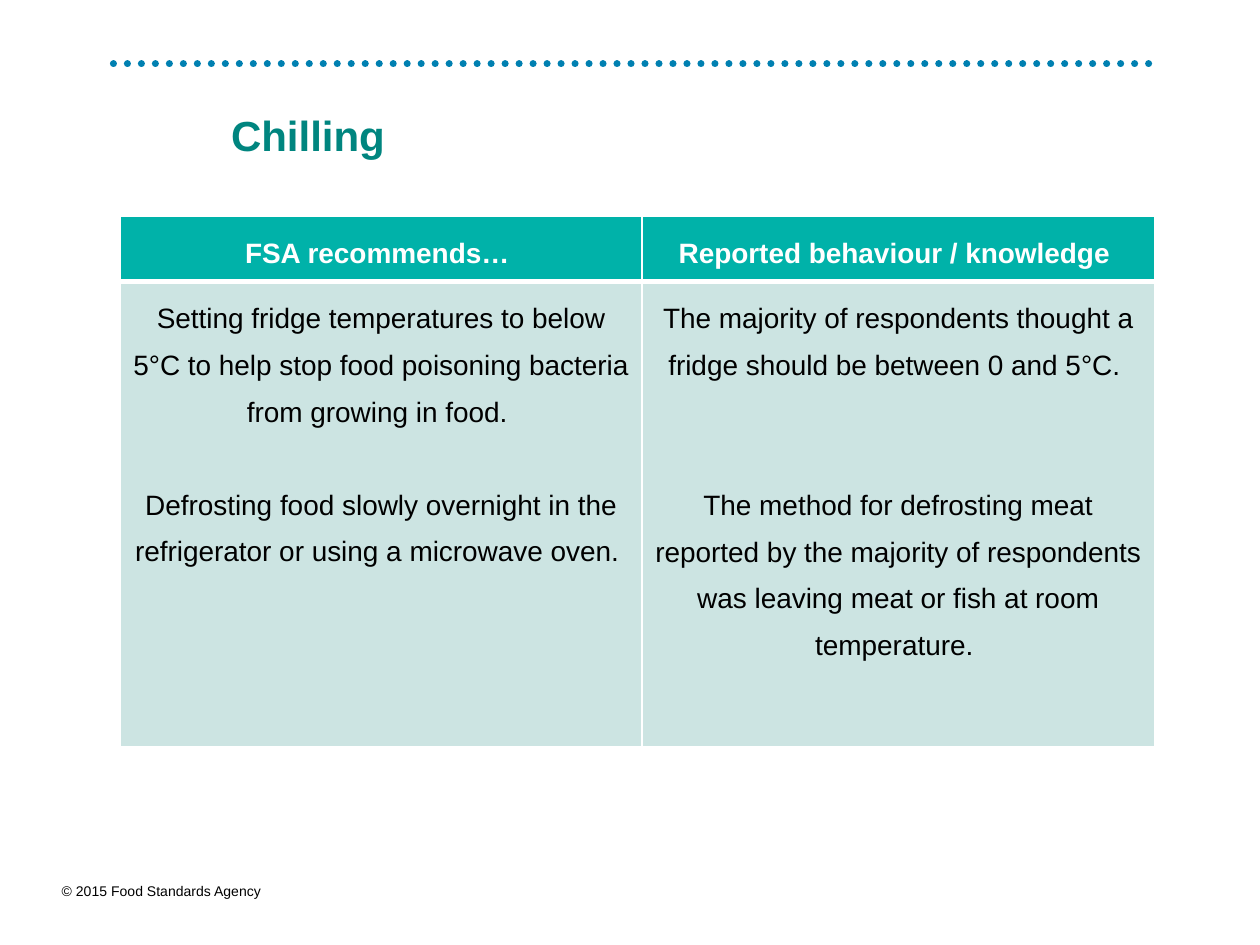
import pptx
import pptx.util
import pptx.dml.color
import pptx.enum.dml
import pptx.enum.shapes
import pptx.enum.text
import pptx.oxml.ns
import pptx.oxml.xmlchemy

Pt = pptx.util.Pt
RGBColor = pptx.dml.color.RGBColor
qn = pptx.oxml.ns.qn
OxmlElement = pptx.oxml.xmlchemy.OxmlElement

BLUE = RGBColor(0x00, 0x80, 0xB1)
DARK_TEAL = RGBColor(0x00, 0x85, 0x7F)
TEAL = RGBColor(0x00, 0xB2, 0xA9)
PALE_TEAL = RGBColor(0xCC, 0xE4, 0xE2)
WHITE = RGBColor(0xFF, 0xFF, 0xFF)
BLACK = RGBColor(0x00, 0x00, 0x00)

LINE_HEIGHT = 26.7
HEADINGS = ["FSA recommends… ", "Reported behaviour / knowledge "]
# Each column: paragraphs with the number of lines left free above them
COLUMNS = [
    [("Setting fridge temperatures to below 5°C to help stop food poisoning "
      "bacteria from growing in food. ", 0),
     ("Defrosting food slowly overnight in the refrigerator or using a "
      "microwave oven. ", 1)],
    [("The majority of respondents thought a fridge should be between "
      "0 and 5°C. ", 0),
     ("The method for defrosting meat reported by the majority of respondents "
      "was leaving meat or fish at room temperature. ", 2)],
]


def format_runs(paragraph, size, color, bold=False):
    for run in paragraph.runs:
        run.font.name = "Arial"
        run.font.size = Pt(size)
        run.font.bold = bold
        run.font.color.rgb = color


def add_dotted_rule(slide, left, top, width):
    rule = slide.shapes.add_connector(
        pptx.enum.shapes.MSO_CONNECTOR.STRAIGHT,
        Pt(left), Pt(top), Pt(left + width), Pt(top))
    rule.line.color.rgb = BLUE
    rule.line.width = Pt(4)
    rule.line.dash_style = pptx.enum.dml.MSO_LINE.ROUND_DOT
    properties = rule._element.spPr
    properties.find(qn("a:ln")).set("cap", "rnd")
    properties.append(OxmlElement("a:effectLst"))


def add_title(slide, left, top, width, height):
    title = slide.shapes.add_textbox(Pt(left), Pt(top), Pt(width), Pt(height))
    frame = title.text_frame
    frame.word_wrap = True
    frame.vertical_anchor = pptx.enum.text.MSO_ANCHOR.MIDDLE
    frame.margin_left = Pt(66.5)
    frame.margin_right = frame.margin_top = frame.margin_bottom = 0
    frame.text = "Chilling"
    frame.paragraphs[0].line_spacing = 0.9
    format_runs(frame.paragraphs[0], 24, DARK_TEAL, bold=True)


def set_borders(cell, bottom_width):
    """Give the cell white borders, 1 pt wide except at the bottom."""
    properties = cell._tc.get_or_add_tcPr()
    widths = {"a:lnL": 1, "a:lnR": 1, "a:lnT": 1, "a:lnB": bottom_width}
    for position, (tag, width) in enumerate(widths.items()):
        border = OxmlElement(tag)
        border.set("w", str(int(Pt(width))))
        fill = OxmlElement("a:solidFill")
        color = OxmlElement("a:srgbClr")
        color.set("val", str(WHITE))
        fill.append(color)
        border.append(fill)
        properties.insert(position, border)


def fill_cell(cell, paragraphs, background, color, bold, bottom_width):
    cell.fill.solid()
    cell.fill.fore_color.rgb = background
    set_borders(cell, bottom_width)
    frame = cell.text_frame
    frame.text = "\n".join(text for text, _ in paragraphs)
    for paragraph, (_, free_lines) in zip(frame.paragraphs, paragraphs):
        paragraph.alignment = pptx.enum.text.PP_ALIGN.CENTER
        paragraph.line_spacing = 1.5
        if free_lines:
            paragraph.space_before = Pt(free_lines * LINE_HEIGHT)
        format_runs(paragraph, 16, color, bold)


def add_comparison(slide, left, top, width, height):
    table = slide.shapes.add_table(
        2, 2, Pt(left), Pt(top), Pt(width), Pt(height)).table
    header_height, first_width = 37.5, 298
    table.rows[0].height = Pt(header_height)
    table.rows[1].height = Pt(height - header_height)
    table.columns[0].width = Pt(first_width)
    table.columns[1].width = Pt(width - first_width)
    for column, (heading, paragraphs) in enumerate(zip(HEADINGS, COLUMNS)):
        fill_cell(table.cell(0, column), [(heading, 0)], TEAL, WHITE, True, 3)
        fill_cell(table.cell(1, column), paragraphs, PALE_TEAL, BLACK, False, 1)
        # The edge shared by both rows is drawn at one width
        shared_edge = table.cell(1, column)._tc.tcPr.find(qn("a:lnT"))
        shared_edge.set("w", str(int(Pt(3))))


def add_copyright(slide, left, top, width, height):
    box = slide.shapes.add_textbox(Pt(left), Pt(top), Pt(width), Pt(height))
    frame = box.text_frame
    frame.word_wrap = False
    frame.text = "© 2015 Food Standards Agency"
    format_runs(frame.paragraphs[0], 8, BLACK)


def main():
    presentation = pptx.Presentation()
    presentation.slide_width = Pt(720)
    presentation.slide_height = Pt(540)
    slide = presentation.slides.add_slide(presentation.slide_layouts[6])
    add_dotted_rule(slide, 64.8, 36.5, 592.5)
    add_copyright(slide, 28.2, 501, 130, 17)
    add_title(slide, 65.5, 41, 591, 75.6)
    add_comparison(slide, 68.8, 123.5, 591, 303)
    presentation.save("out.pptx")


if __name__ == "__main__":
    main()
